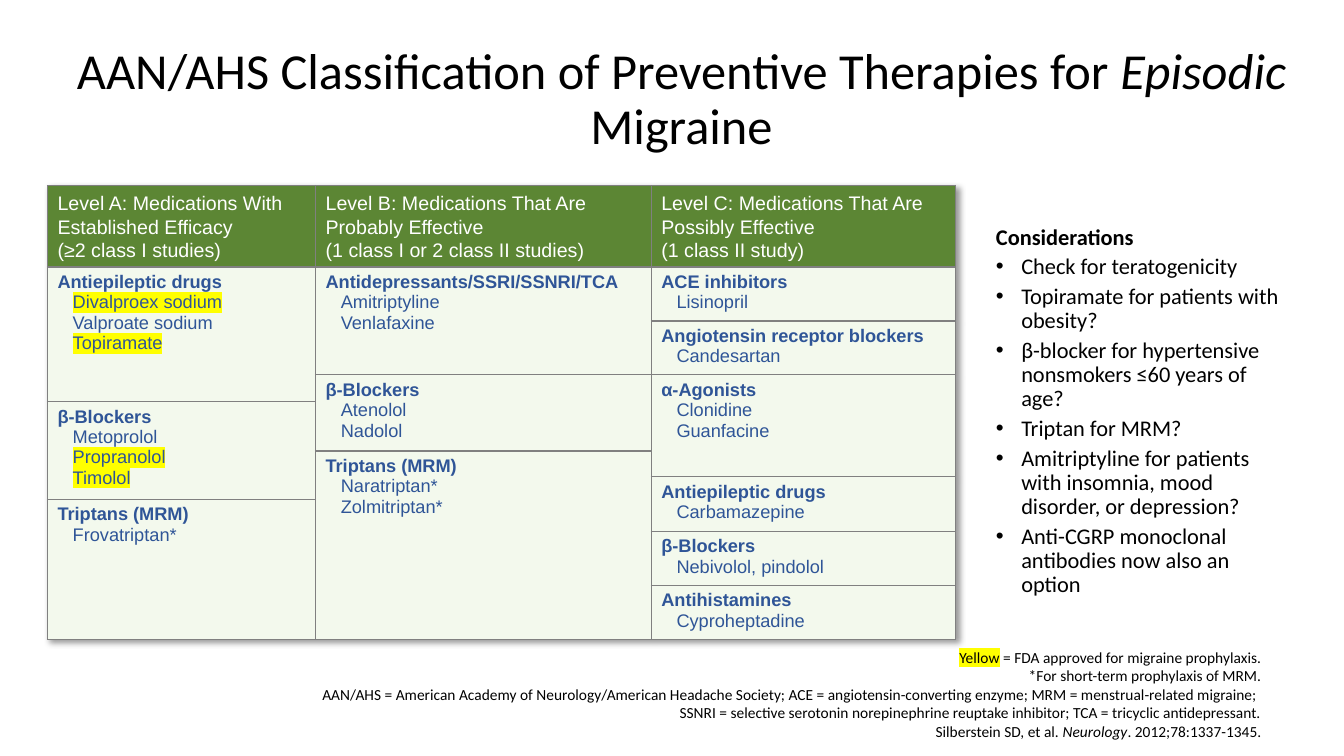
from dataclasses import dataclass

import pptx
import pptx.dml.color
import pptx.enum.text
import pptx.oxml
import pptx.oxml.ns
import pptx.util
from lxml import etree

ALIGN = pptx.enum.text.PP_ALIGN
ANCHOR = pptx.enum.text.MSO_ANCHOR
Pt = pptx.util.Pt
qn = pptx.oxml.ns.qn

COLORS = {
    "text": "000000", "header_text": "FFFFFF", "drug": "2F5597",
    "header": "5C8634", "cell": "F3F9ED", "border": "808080",
    "approved": "FFFF00",
}

prs = pptx.Presentation()
prs.slide_width = pptx.util.Inches(13.33)
prs.slide_height = pptx.util.Inches(7.5)
s = prs.slides.add_slide(prs.slide_layouts[6])


@dataclass
class Style:
    size: float
    color: str = "text"
    font: str = "Calibri"


@dataclass
class Run:
    text: str
    bold: bool = False
    italic: bool = False
    approved: bool = False


@dataclass
class Box:
    """Place in percent of the slide's width and height."""
    left: float
    top: float
    width: float
    height: float


@dataclass
class DrugClass:
    """A merged cell, from first to last table row."""
    first: int
    last: int
    name: str
    drugs: list[str]


@dataclass
class Level:
    width: float
    heading: str
    classes: list[DrugClass]


def across(share: float) -> int:
    return round(prs.slide_width * share / 100)


def down(share: float) -> int:
    return round(prs.slide_height * share / 100)


def rgb(name: str) -> pptx.dml.color.RGBColor:
    return pptx.dml.color.RGBColor.from_string(COLORS[name])


def new_paragraph(tf, first: bool):
    return tf.paragraphs[0] if first else tf.add_paragraph()


def add_runs(p, runs: list[Run], style: Style) -> None:
    for run in runs:
        for i, line in enumerate(run.text.split("\n")):
            if i:
                p.add_line_break()
            r = p.add_run()
            r.text = line
            r.font.size = Pt(style.size)
            r.font.bold = run.bold
            r.font.italic = run.italic
            r.font.color.rgb = rgb(style.color)
            if run.approved:
                mark = etree.SubElement(r._r.get_or_add_rPr(), qn("a:highlight"))
                etree.SubElement(mark, qn("a:srgbClr"), val=COLORS["approved"])
            r.font.name = style.font


def add_box(box: Box, anchor=ANCHOR.TOP):
    sp = s.shapes.add_textbox(across(box.left), down(box.top),
                              across(box.width), down(box.height))
    tf = sp.text_frame
    tf.word_wrap = True
    tf.vertical_anchor = anchor
    return tf


def indent(p, left: float, hanging: float = 0) -> None:
    pPr = p._p.get_or_add_pPr()
    pPr.set("marL", str(across(left)))
    pPr.set("indent", str(-across(hanging)))


def style_cell(cell, fill: str) -> None:
    tcPr = cell._tc.get_or_add_tcPr()
    for side in ("a:lnL", "a:lnR", "a:lnT", "a:lnB"):
        ln = etree.SubElement(tcPr, qn(side), w=str(Pt(1)))
        solid = etree.SubElement(ln, qn("a:solidFill"))
        etree.SubElement(solid, qn("a:srgbClr"), val=COLORS["border"])
    cell.fill.solid()
    cell.fill.fore_color.rgb = rgb(fill)


# Title
p = add_box(Box(3.45, 5.47, 94.52, 7.2)).paragraphs[0]
p.alignment = ALIGN.CENTER
p.line_spacing = 0.9
add_runs(p, [Run("AAN/AHS Classification of Preventive Therapies for "),
             Run("Episodic", italic=True), Run(" Migraine")], Style(36))

# Table of evidence levels
APPROVED = {"Divalproex sodium", "Topiramate", "Propranolol", "Timolol"}
ROWS = [10.8, 7.13, 7.13, 3.57, 6.5, 3.4, 2.93, 4.23, 7.13, 7.13]
LEVELS = [
    Level(19.95, "Level A: Medications With Established Efficacy\n(≥2 class I studies)", [
        DrugClass(1, 3, "Antiepileptic drugs",
                  ["Divalproex sodium", "Valproate sodium", "Topiramate"]),
        DrugClass(4, 6, "β-Blockers", ["Metoprolol", "Propranolol", "Timolol"]),
        DrugClass(7, 9, "Triptans (MRM)", ["Frovatriptan*"]),
    ]),
    Level(24.98, "Level B: Medications That Are Probably Effective\n"
                 "(1 class I or 2 class II studies)", [
        DrugClass(1, 2, "Antidepressants/SSRI/SSNRI/TCA", ["Amitriptyline", "Venlafaxine"]),
        DrugClass(3, 4, "β-Blockers", ["Atenolol", "Nadolol"]),
        DrugClass(5, 9, "Triptans (MRM)", ["Naratriptan*", "Zolmitriptan*"]),
    ]),
    Level(22.66, "Level C: Medications That Are Possibly Effective\n(1 class II study)", [
        DrugClass(1, 1, "ACE inhibitors", ["Lisinopril"]),
        DrugClass(2, 2, "Angiotensin receptor blockers", ["Candesartan"]),
        DrugClass(3, 5, "α-Agonists", ["Clonidine", "Guanfacine"]),
        DrugClass(6, 7, "Antiepileptic drugs", ["Carbamazepine"]),
        DrugClass(8, 8, "β-Blockers", ["Nebivolol, pindolol"]),
        DrugClass(9, 9, "Antihistamines", ["Cyproheptadine"]),
    ]),
]
table = s.shapes.add_table(
    len(ROWS), len(LEVELS), across(3.53), down(24.53),
    across(sum(level.width for level in LEVELS)), down(sum(ROWS))).table
for row, height in zip(table.rows, ROWS):
    row.height = down(height)
for col, level in enumerate(LEVELS):
    table.columns[col].width = across(level.width)
    for row in range(len(ROWS)):
        style_cell(table.cell(row, col), "cell" if row else "header")
    head = table.cell(0, col)
    head.vertical_anchor = ANCHOR.BOTTOM
    p = head.text_frame.paragraphs[0]
    p.line_spacing = Pt(17)
    add_runs(p, [Run(level.heading)], Style(14, "header_text", "Arial"))
    for group in level.classes:
        cell = table.cell(group.first, col)
        if group.last > group.first:
            cell.merge(table.cell(group.last, col))
        tf = cell.text_frame
        drug_style = Style(13, "drug", "Arial")
        add_runs(tf.paragraphs[0], [Run(group.name, bold=True)], drug_style)
        for drug in group.drugs:
            p = tf.add_paragraph()
            indent(p, 1.13)
            add_runs(p, [Run(drug, approved=drug in APPROVED)], drug_style)

# Table shadow
table._tbl.tblPr.insert(0, pptx.oxml.parse_xml(
    f'<a:effectLst {pptx.oxml.ns.nsdecls("a")}>'
    '<a:outerShdw blurRad="50800" dist="38100" dir="2700000" algn="tl">'
    '<a:srgbClr val="000000"><a:alpha val="40000"/></a:srgbClr>'
    '</a:outerShdw></a:effectLst>'))

# Considerations
tf = add_box(Box(73.37, 29.2, 23.18, 39.2))
for i, item in enumerate([
        "Considerations", "Check for teratogenicity",
        "Topiramate for patients with obesity?",
        "β-blocker for hypertensive nonsmokers ≤60 years of age?",
        "Triptan for MRM?",
        "Amitriptyline for patients with insomnia, mood disorder, or depression?",
        "Anti-CGRP monoclonal antibodies now also an option"]):
    p = new_paragraph(tf, i == 0)
    p.line_spacing = 0.9
    if i:
        p.space_before = Pt(4)
        indent(p, 1.88, 1.88)
        pPr = p._p.get_or_add_pPr()
        etree.SubElement(pPr, qn("a:buFont"), typeface="Arial")
        etree.SubElement(pPr, qn("a:buChar"), char="•")
    add_runs(p, [Run(item, bold=i == 0)], Style(16))

# Footnotes
tf = add_box(Box(3.68, 85.6, 90.92, 12.4), ANCHOR.MIDDLE)
for i, runs in enumerate([
        [Run("Yellow", approved=True), Run(" = FDA approved for migraine prophylaxis.")],
        [Run("*For short-term prophylaxis of MRM.\n"
             "AAN/AHS = American Academy of Neurology/American Headache Society; "
             "ACE = angiotensin-converting enzyme; MRM = menstrual-related migraine; \n"
             "SSNRI = selective serotonin norepinephrine reuptake inhibitor; "
             "TCA = tricyclic antidepressant.\nSilberstein SD, et al. "),
         Run("Neurology", italic=True), Run(". 2012;78:1337-1345.")]]):
    p = new_paragraph(tf, i == 0)
    p.alignment = ALIGN.RIGHT
    add_runs(p, runs, Style(11))

prs.save("out.pptx")
